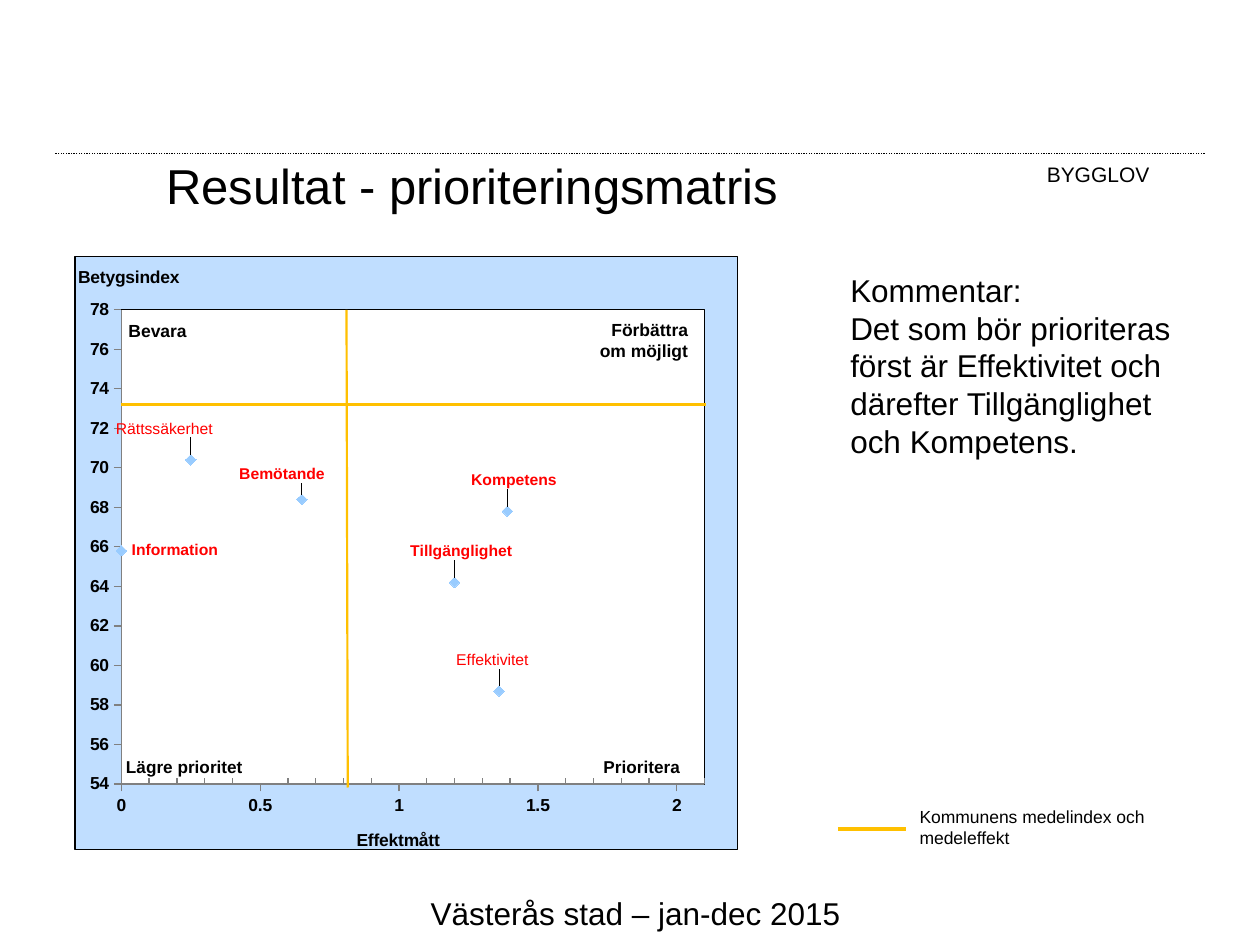
from lxml.etree import SubElement
from pptx import Presentation
from pptx.chart.data import XyChartData
from pptx.dml.color import RGBColor
from pptx.enum.chart import (XL_CHART_TYPE, XL_LABEL_POSITION,
                             XL_MARKER_STYLE, XL_TICK_MARK)
from pptx.enum.dml import MSO_LINE
from pptx.enum.shapes import MSO_CONNECTOR
from pptx.enum.text import MSO_ANCHOR, PP_ALIGN
from pptx.oxml import parse_xml
from pptx.oxml.ns import nsdecls, qn
from pptx.util import Inches, Pt

BLACK = RGBColor(0x00, 0x00, 0x00)
WHITE = RGBColor(0xFF, 0xFF, 0xFF)
GOLD = RGBColor(0xFF, 0xC0, 0x00)
RED = RGBColor(0xFF, 0x00, 0x00)
PALE = RGBColor(0xC0, 0xDE, 0xFF)
SKY = RGBColor(0x99, 0xCC, 0xFF)
GREY = RGBColor(0x80, 0x80, 0x80)

# The slide is a grid of 100 columns by 75 rows
COLS, ROWS = 100, 75
CELL = Inches(0.1)

# name, effect, index, label side, label shift in shares of the chart, bold
POINTS = [
    ("Tillgänglighet", 1.2, 64.2, "ABOVE", (0.01, -0.02), True),
    ("Information", 0, 65.8, "RIGHT", None, True),
    ("Bemötande", 0.65, 68.4, "ABOVE", (-0.03, -0.01), True),
    ("Kompetens", 1.39, 67.8, "ABOVE", (0.01, -0.02), True),
    ("Rättssäkerhet", 0.25, 70.4, "ABOVE", (-0.04, -0.02), False),
    ("Effektivitet", 1.36, 58.7, "ABOVE", (-0.01, -0.02), False),
]


def grid(*nums):
    return [int(n * CELL) for n in nums]


def assign(obj, vals):
    for key, val in vals.items():
        setattr(obj, key, val)


def style(font, size, bold=False, color=BLACK):
    assign(font, {"name": "Arial", "size": Pt(size), "bold": bold})
    font.color.rgb = color


def write(slide, box, lines, size, bold=False, align=PP_ALIGN.LEFT,
          pads=(1, 0.5, 1, 0.5), **frame):
    text = slide.shapes.add_textbox(*grid(*box)).text_frame
    left, top, right, low = grid(*pads)
    assign(text, {"word_wrap": True, "margin_left": left, "margin_top": top,
                  "margin_right": right, "margin_bottom": low, **frame})
    for num, line in enumerate(lines):
        para = text.add_paragraph() if num else text.paragraphs[0]
        para.alignment = align
        run = para.add_run()
        run.text = line
        style(run.font, size, bold)


def rule(slide, ends, color, width, dash=None):
    line = slide.shapes.add_connector(MSO_CONNECTOR.STRAIGHT, *grid(*ends))
    line.line.color.rgb = color
    assign(line.line, {"width": Pt(width), "dash_style": dash})
    SubElement(line._element.spPr, qn("a:effectLst"))


def layout(node, at, **vals):
    """Give a chart part a manual layout as its child number at."""
    for old in node.findall(qn("c:layout")):
        node.remove(old)
    body = "".join(f'<c:{key} val="{val}"/>' for key, val in vals.items())
    node.insert(at, parse_xml(
        f'<c:layout {nsdecls("c")}><c:manualLayout>{body}'
        '</c:manualLayout></c:layout>'))


def panel(color):
    """Fill with a thin black border for a chart area."""
    return parse_xml(
        f'<c:spPr {nsdecls("c", "a")}><a:solidFill><a:srgbClr val="{color}"/>'
        f'</a:solidFill><a:ln w="9525"><a:solidFill><a:srgbClr val="{BLACK}"/>'
        '</a:solidFill></a:ln></c:spPr>')


def set_axis(axis, name, place, vals):
    assign(axis, {"has_major_gridlines": False, "has_minor_gridlines": False,
                  "major_tick_mark": XL_TICK_MARK.OUTSIDE, **vals})
    style(axis.tick_labels.font, 10, True)
    assign(axis.tick_labels, {"number_format": "General",
                              "number_format_is_linked": False})
    axis.format.line.color.rgb = GREY
    text = axis.axis_title.text_frame
    text.text = name
    style(text.paragraphs[0].runs[0].font, 10, True)
    text._txBody.bodyPr.set("rot", "0")
    layout(axis.axis_title._element, 1, xMode="edge", yMode="edge",
           x=place[0], y=place[1])


def set_points(series):
    series.format.line.fill.background()
    mark = series.marker
    assign(mark, {"style": XL_MARKER_STYLE.DIAMOND, "size": 6})
    mark.format.fill.solid()
    mark.format.fill.fore_color.rgb = SKY
    mark.format.line.color.rgb = SKY
    for num, (name, _, _, side, shift, bold) in enumerate(POINTS):
        label = series.points[num].data_label
        label.text_frame.text = name
        label.text_frame.word_wrap = False
        style(label.text_frame.paragraphs[0].runs[0].font, 9, bold, RED)
        label.position = XL_LABEL_POSITION[side]
        if shift:
            layout(label._dLbl, 1, x=shift[0], y=shift[1])


def matrix(slide, box):
    data = XyChartData()
    points = data.add_series("Series 1")
    for _, effect, index, *_ in POINTS:
        points.add_data_point(effect, index)
    chart = slide.shapes.add_chart(
        XL_CHART_TYPE.XY_SCATTER, *grid(*box), data).chart
    assign(chart, {"has_legend": False, "has_title": False})
    style(chart.font, 18)
    chart.plots[0].vary_by_categories = False
    set_axis(chart.category_axis, "Effektmått", (0.42, 0.96),
             {"minimum_scale": 0, "maximum_scale": 2.1, "major_unit": 0.5,
              "minor_unit": 0.1, "minor_tick_mark": XL_TICK_MARK.INSIDE})
    set_axis(chart.value_axis, "Betygsindex", (0, 0.01),
             {"minimum_scale": 54, "maximum_scale": 78, "major_unit": 2,
              "minor_tick_mark": XL_TICK_MARK.NONE})
    set_points(chart.plots[0].series[0])

    # Chart and plot areas
    root = chart._chartSpace
    plot = root.chart.plotArea
    layout(plot, 0, layoutTarget="inner", xMode="edge", yMode="edge",
           x=0.07, y=0.09, w=0.88, h=0.8)
    plot.append(panel(WHITE))
    root.chart.addnext(panel(PALE))

    # Mean lines and quadrant names
    left, top = box[:2]
    rule(slide, (left + 21.6, top + 4.3, left + 21.7, top + 42.2), GOLD, 1.25)
    rule(slide, (left + 3.7, top + 11.8, left + 50.1, top + 11.8), GOLD, 1.25)
    near = {"pads": (0.3, 0.3, 0, 0)}
    far = {"pads": (0, 0.3, 0.3, 0), "align": PP_ALIGN.RIGHT}
    for x, y, w, h, name, size, form in [
            (4, 4.8, 17, 8, "Bevara", 10, near),
            (41.4, 4.7, 7.6, 4, "Förbättra om möjligt", 10, far),
            (41.7, 39.4, 8, 2.2, "Prioritera", 9.8, near),
            (3.8, 39.4, 11.4, 2.2, "Lägre prioritet", 9.8, near)]:
        write(slide, (left + x, top + y, w, h), [name], size, True, **form)


def header(slide, box):
    left, top, wide, high = box
    rule(slide, (left + wide, top, left, top), BLACK, 0.75, MSO_LINE.ROUND_DOT)
    write(slide, (left + 7.8, top + 0.1, 69, high), ["Resultat - prioriteringsmatris"],
          28, vertical_anchor=MSO_ANCHOR.MIDDLE)
    write(slide, (left + 77.7, top + 0.1, 10.3, 3), ["BYGGLOV"], 12, word_wrap=False)


def comment(slide, box):
    write(slide, box, ["Kommentar:", "Det som bör prioriteras först är Effektivitet "
                       "och därefter Tillgänglighet och Kompetens."], 18)


def legend(slide, box):
    left, top, wide, high = box
    rule(slide, (left, top + 2.3, left + 5.4, top + 2.3), GOLD, 2.25)
    write(slide, (left + 5.5, top, wide - 5.5, high),
          ["Kommunens medelindex och medeleffekt"], 10)


def footer(slide, box):
    write(slide, box, ["Västerås stad – jan-dec 2015"], 18, word_wrap=False)


def main():
    deck = Presentation()
    deck.slide_width, deck.slide_height = grid(COLS, ROWS)
    slide = deck.slides.add_slide(deck.slide_layouts[6])
    header(slide, (4.4, 12.2, 91.2, 4.7))
    matrix(slide, (5.9, 20.3, 52.7, 47.6))
    comment(slide, (66.5, 21, 29.6, 16.2))
    legend(slide, (66.5, 63.5, 29.9, 4.4))
    footer(slide, (33.2, 70.5, 34.8, 4))
    deck.save("out.pptx")


if __name__ == "__main__":
    main()
